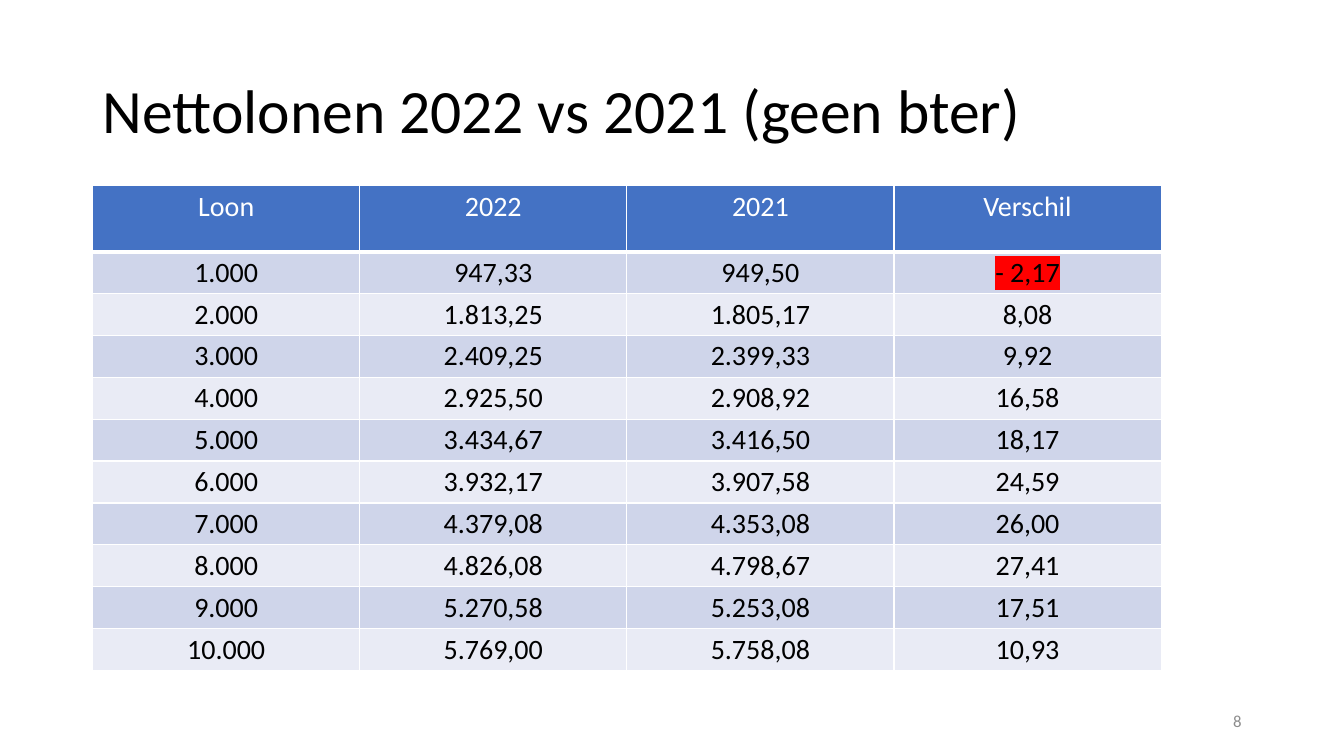
from lxml.etree import SubElement as Sub
from pptx import Presentation
from pptx.dml.color import RGBColor as RGB
from pptx.enum.text import MSO_ANCHOR as Anchor, PP_ALIGN as Align
from pptx.oxml.ns import qn
from pptx.util import Pt

COLORS = {
    "black": "000000", "white": "FFFFFF", "header": "4472C4",
    "odd": "CFD5EA", "even": "E9EBF5", "alert": "FF0000", "number": "8C8C8C",
}
HEADER = ["Loon", "2022", "2021", "Verschil"]
WAGES = [
    ("1.000", "947,33", "949,50", "- 2,17"),
    ("2.000", "1.813,25", "1.805,17", "8,08"),
    ("3.000", "2.409,25", "2.399,33", "9,92"),
    ("4.000", "2.925,50", "2.908,92", "16,58"),
    ("5.000", "3.434,67", "3.416,50", "18,17"),
    ("6.000", "3.932,17", "3.907,58", "24,59"),
    ("7.000", "4.379,08", "4.353,08", "26,00"),
    ("8.000", "4.826,08", "4.798,67", "27,41"),
    ("9.000", "5.270,58", "5.253,08", "17,51"),
    ("10.000", "5.769,00", "5.758,08", "10,93"),
]


def write(tf, text, size=20, color="black", align=Align.LEFT, spacing=None,
          highlight=None, font="Calibri"):
    p = tf.paragraphs[0]
    p.alignment = align
    p.line_spacing = spacing
    r = p.add_run()
    r.text = text
    r.font.size = Pt(size)
    r.font.bold = False
    r.font.color.rgb = RGB.from_string(COLORS[color])
    if highlight:
        mark = Sub(r.font._element, qn("a:highlight"))
        Sub(mark, qn("a:srgbClr"), val=COLORS[highlight])
    r.font.name = font


class Deck:
    """Holds the colours, the presentation and its current slide."""

    def __init__(self, width, height):
        self.prs = Presentation()
        self.prs.slide_width, self.prs.slide_height = Pt(width), Pt(height)
        self.s = self.prs.slides.add_slide(self.prs.slide_layouts[5])

    def title(self, text, x, y, w, h):
        sp = self.s.shapes.title
        sp.left, sp.top, sp.width, sp.height = Pt(x), Pt(y), Pt(w), Pt(h)
        sp.text_frame.vertical_anchor = Anchor.MIDDLE
        write(sp.text_frame, text, size=44, spacing=0.9)

    def text(self, text, x, y, w, h, **style):
        tf = self.s.shapes.add_textbox(Pt(x), Pt(y), Pt(w), Pt(h)).text_frame
        tf.word_wrap = True
        tf.vertical_anchor = Anchor.MIDDLE
        write(tf, text, **style)

    def borders(self, cell, **widths):
        tcPr = cell._tc.get_or_add_tcPr()
        for side in "LRTB":
            ln = Sub(tcPr, qn("a:ln" + side), w=str(Pt(widths.get(side, 1))))
            fill = Sub(ln, qn("a:solidFill"))
            Sub(fill, qn("a:srgbClr"), val=COLORS["white"])

    def cell(self, cell, text, fill, **style):
        cell.margin_left = cell.margin_right = Pt(5.4)
        cell.margin_top = cell.margin_bottom = Pt(2.7)
        cell.fill.solid()
        cell.fill.fore_color.rgb = RGB.from_string(COLORS[fill])
        write(cell.text_frame, text, align=Align.CENTER, **style)

    def table(self, rows, x, y, col_w, head_h, row_h):
        n, m = len(rows), len(rows[0])
        height = head_h + row_h * (n - 1)
        table = self.s.shapes.add_table(
            n, m, Pt(x), Pt(y), Pt(col_w * m), Pt(height)).table
        for col in table.columns:
            col.width = Pt(col_w)
        for i, row in enumerate(rows):
            table.rows[i].height = Pt(row_h if i else head_h)
            fill = ("odd" if i % 2 else "even") if i else "header"
            for j, text in enumerate(row):
                cell = table.cell(i, j)
                self.borders(cell, T=3 if i == 1 else 1, B=1 if i else 3)
                self.cell(cell, text, fill, color="black" if i else "white",
                          highlight="alert" if text.startswith("-") else None)


def main():
    deck = Deck(960, 540)
    deck.title("Nettolonen 2022 vs 2021 (geen bter)", 66, 28.75, 828, 104.4)
    deck.table([HEADER] + WAGES, 66.2, 132.6, 190.8, 47.2, 29.9)
    deck.text("8", 678, 500.5, 216, 28.75, size=12, color="number",
              align=Align.RIGHT)
    deck.prs.save("out.pptx")


if __name__ == "__main__":
    main()
